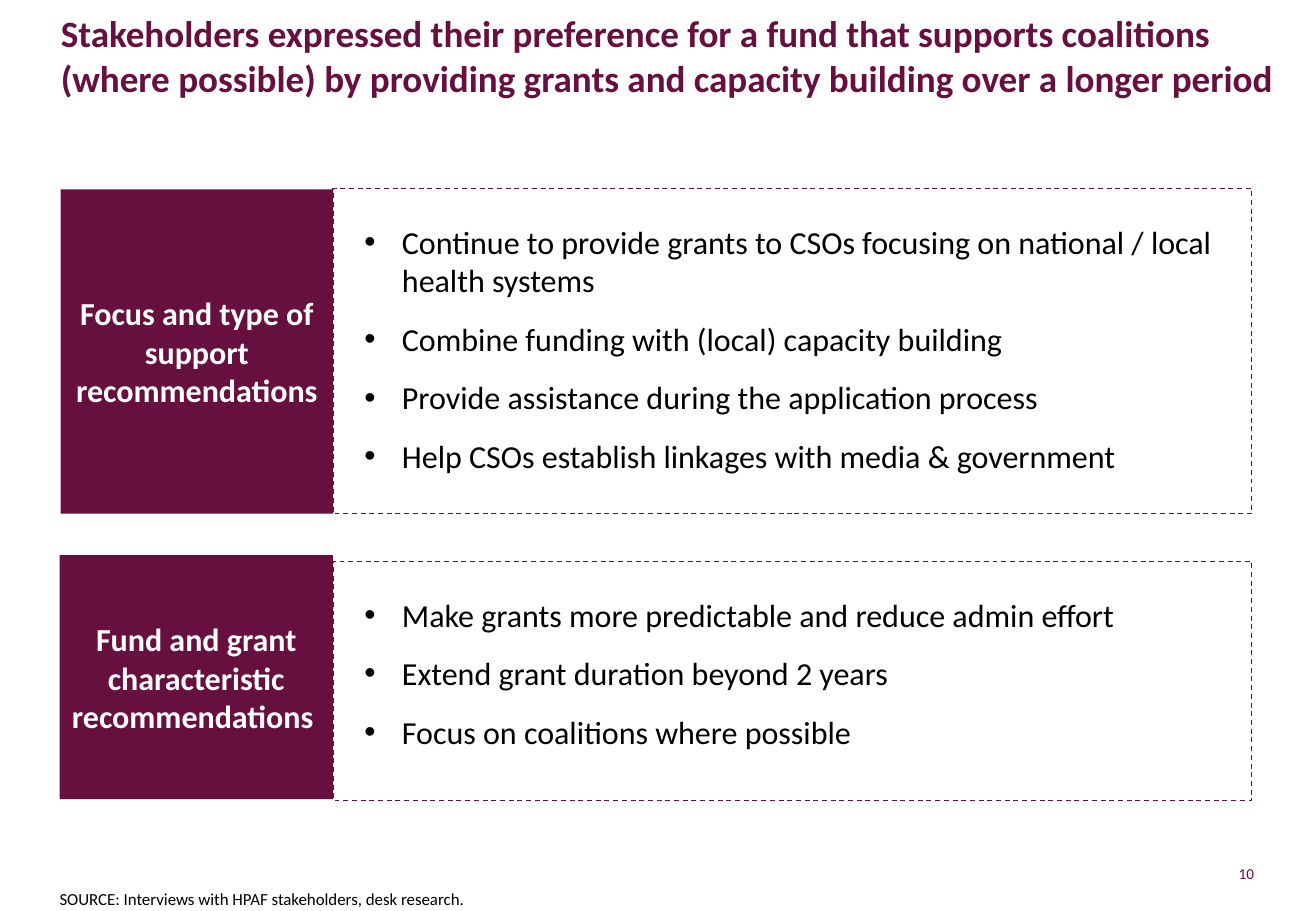
from dataclasses import dataclass

from lxml import etree
from pptx import Presentation
from pptx.dml.color import RGBColor
from pptx.enum.dml import MSO_LINE
from pptx.enum.shapes import MSO_SHAPE
from pptx.enum.text import MSO_ANCHOR, PP_ALIGN
from pptx.oxml.ns import qn
from pptx.shapes.autoshape import Shape
from pptx.slide import Slide
from pptx.util import Inches, Pt

RECTANGLE = MSO_SHAPE.RECTANGLE
DASH = MSO_LINE.DASH
TOP, MIDDLE, BOTTOM = MSO_ANCHOR.TOP, MSO_ANCHOR.MIDDLE, MSO_ANCHOR.BOTTOM
LEFT, CENTER, RIGHT = PP_ALIGN.LEFT, PP_ALIGN.CENTER, PP_ALIGN.RIGHT

FONT = "Calibri"
PLUM, BLACK, WHITE = "67103F", "000000", "FFFFFF"
BODY_SIZE = 19
BULLET_INDENT = 0.31
PANEL_LEFT, PANEL_WIDTH = 2.74, 7.56
LIST_LEFT = 2.9


@dataclass(frozen=True)
class Area:
    left: float
    top: float
    width: float
    height: float

    def lengths(self) -> tuple[int, int, int, int]:
        return (Inches(self.left), Inches(self.top),
                Inches(self.width), Inches(self.height))


@dataclass(frozen=True)
class Recommendation:
    label: str
    label_area: Area
    panel_area: Area
    list_area: Area
    points: tuple[str, ...]


RECOMMENDATIONS = (
    Recommendation(
        "Focus and type of support recommendations",
        Area(0.5, 1.56, 2.24, 2.67),
        Area(PANEL_LEFT, 1.55, PANEL_WIDTH, 2.68),
        Area(LIST_LEFT, 1.78, 7.24, 2.2),
        (
            "Continue to provide grants to CSOs focusing on national / local health systems",
            "Combine funding with (local) capacity building",
            "Provide assistance during the application process",
            "Help CSOs establish linkages with media & government",
        ),
    ),
    Recommendation(
        "Fund and grant characteristic recommendations ",
        Area(0.49, 4.57, 2.25, 2.01),
        Area(PANEL_LEFT, 4.62, PANEL_WIDTH, 1.97),
        Area(LIST_LEFT, 4.85, 6.93, 1.4),
        (
            "Make grants more predictable and reduce admin effort",
            "Extend grant duration beyond 2 years",
            "Focus on coalitions where possible",
        ),
    ),
)


def color(value: str) -> RGBColor:
    return RGBColor.from_string(value)


def write(box: Shape, *texts: str, size: float = BODY_SIZE, ink: str = BLACK,
          bold: bool = False, align: PP_ALIGN = LEFT, anchor: MSO_ANCHOR = TOP,
          bullets: bool = False, space_after: float = 0,
          inset: bool = True) -> None:
    frame = box.text_frame
    frame.word_wrap = True
    frame.vertical_anchor = anchor
    if not inset:
        frame.margin_left = frame.margin_right = Inches(0)
        frame.margin_top = frame.margin_bottom = Inches(0)
    for index, text in enumerate(texts):
        paragraph = frame.add_paragraph() if index else frame.paragraphs[0]
        paragraph.alignment = align
        paragraph.space_after = Pt(space_after)
        if bullets:
            properties = paragraph._p.get_or_add_pPr()
            properties.set("marL", str(Inches(BULLET_INDENT)))
            properties.set("indent", str(-Inches(BULLET_INDENT)))
            etree.SubElement(properties, qn("a:buFont"), typeface="Arial")
            etree.SubElement(properties, qn("a:buChar"), char="•")
        span = paragraph.add_run()
        span.text = text
        span.font.name = FONT
        span.font.size = Pt(size)
        span.font.bold = bold
        span.font.color.rgb = color(ink)


def add_rectangle(page: Slide, area: Area, filled: bool) -> Shape:
    box = page.shapes.add_shape(RECTANGLE, *area.lengths())
    box.shadow.inherit = False
    if filled:
        box.fill.solid()
        box.fill.fore_color.rgb = color(PLUM)
        box.line.fill.background()
    else:
        box.fill.background()
        box.line.color.rgb = color(PLUM)
        box.line.width = Pt(0.75)
        box.line.dash_style = DASH
    return box


def add_text_box(page: Slide, area: Area) -> Shape:
    return page.shapes.add_textbox(*area.lengths())


def add_recommendation(page: Slide, item: Recommendation) -> None:
    label = add_rectangle(page, item.label_area, filled=True)
    write(label, item.label, ink=WHITE, bold=True, align=CENTER, anchor=MIDDLE)
    add_rectangle(page, item.panel_area, filled=False)
    write(add_text_box(page, item.list_area), *item.points,
          bullets=True, space_after=12)


def main() -> None:
    deck = Presentation()
    deck.slide_width, deck.slide_height = Inches(10.83), Inches(7.5)
    page = deck.slides.add_slide(deck.slide_layouts[6])

    write(add_text_box(page, Area(0.5, 0.15, 10.32, 0.67)),
          "Stakeholders expressed their preference for a fund that supports "
          "coalitions (where possible) by providing grants and capacity "
          "building over a longer period",
          size=22, ink=PLUM, bold=True, anchor=BOTTOM, inset=False)
    for item in RECOMMENDATIONS:
        add_recommendation(page, item)
    write(add_text_box(page, Area(0.49, 7.06, 8.93, 0.42)),
          "SOURCE: Interviews with HPAF stakeholders, desk research.",
          size=10, anchor=BOTTOM, inset=False)
    write(add_text_box(page, Area(9.53, 7.03, 0.79, 0.32)), "10",
          size=9, ink=PLUM, align=RIGHT, anchor=MIDDLE, inset=False)

    deck.save("out.pptx")


if __name__ == "__main__":
    main()
